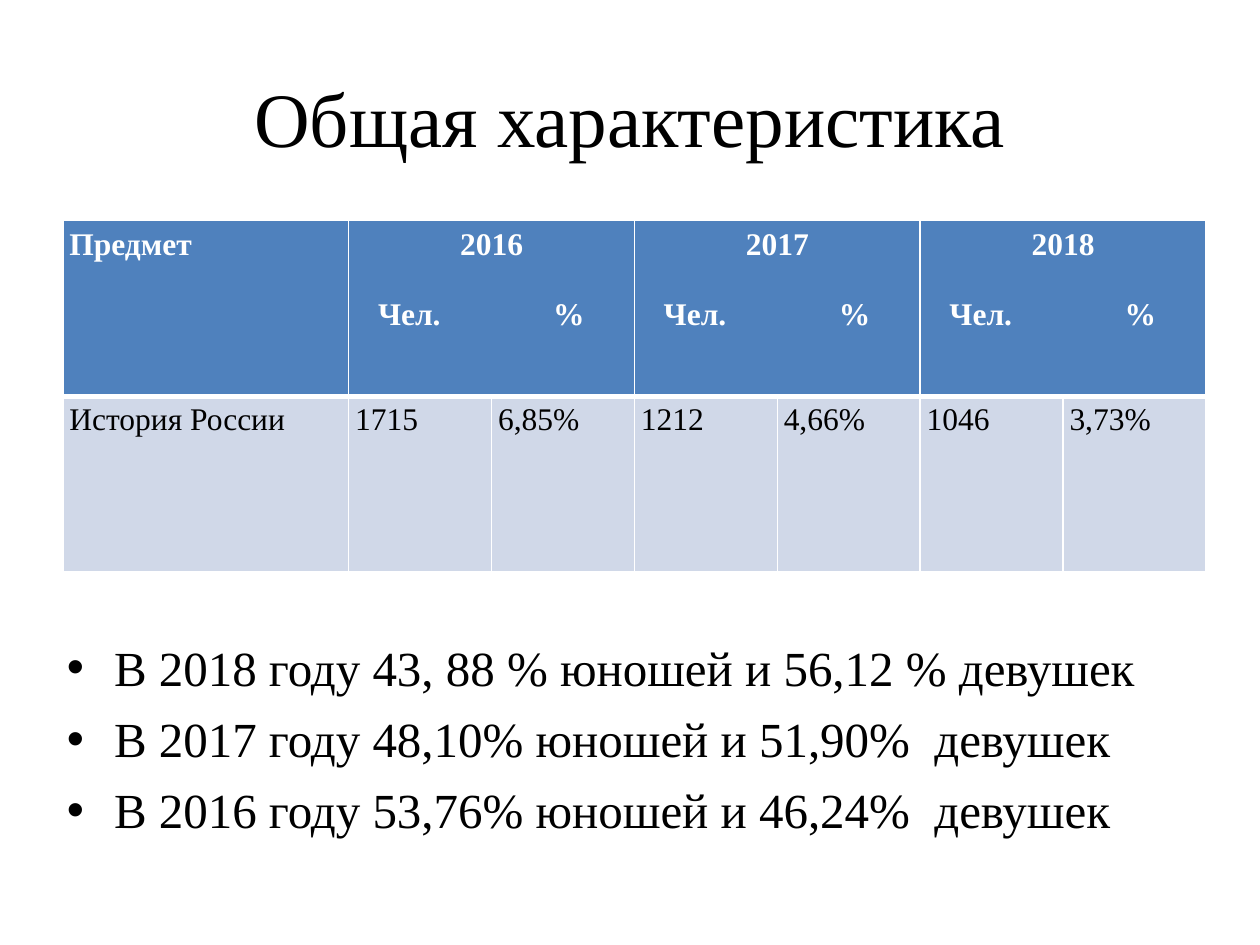
"""Build a slide with a table of exam takers by year and a list of their shares."""
from typing import NamedTuple

from lxml.etree import SubElement
from pptx import Presentation
from pptx.dml.color import RGBColor
from pptx.enum.text import MSO_ANCHOR, PP_ALIGN
from pptx.oxml import parse_xml
from pptx.oxml.ns import qn
from pptx.util import Cm, Pt

FONT = "Times New Roman"
NS = "http://schemas.openxmlformats.org/drawingml/2006/main"
WHITE, BLACK, BLUE, PALE = "FFFFFF", "000000", "4F81BD", "D0D8E8"
UNIT, HIGH = 2.88, 3.54


class Year(NamedTuple):
    name: str
    count: str
    share: str


YEARS = [
    Year("2016", "1715", "6,85%"),
    Year("2017", "1212", "4,66%"),
    Year("2018", "1046", "3,73%"),
]
NOTES = [
    "В 2018 году 43, 88 % юношей и 56,12 % девушек",
    "В 2017 году 48,10% юношей и 51,90%  девушек",
    "В 2016 году 53,76% юношей и 46,24%  девушек",
]


def paint(part, tint: str) -> None:
    part.rgb = RGBColor.from_string(tint)


def write(para, text: str, size: float, tint: str, bold: bool = False) -> None:
    run = para.add_run()
    run.text = text
    font = run.font
    font.name, font.size, font.bold = FONT, Pt(size), bold
    paint(font.color, tint)


def edge(cell, side: str, width: float, spot: int) -> None:
    line = parse_xml(
        f'<a:ln{side} xmlns:a="{NS}" w="{Pt(width)}"><a:solidFill>'
        f'<a:srgbClr val="{WHITE}"/></a:solidFill></a:ln{side}>'
    )
    cell._tc.get_or_add_tcPr().insert(spot, line)


def style(cell, head: bool) -> None:
    cell.margin_left = cell.margin_right = Cm(0.13)
    cell.margin_top = cell.margin_bottom = Cm(0.13)
    cell.fill.solid()
    paint(cell.fill.fore_color, BLUE if head else PALE)
    widths = {"L": 1, "R": 1, "T": 1 if head else 3, "B": 3 if head else 1}
    for spot, (side, width) in enumerate(widths.items()):
        edge(cell, side, width, spot)


def fill_head(cell, year: Year) -> None:
    frame = cell.text_frame
    top = frame.paragraphs[0]
    top.alignment = PP_ALIGN.CENTER
    write(top, year.name, 18, WHITE, True)
    low = frame.add_paragraph()
    low.alignment = PP_ALIGN.LEFT
    low.space_before = Pt(20)
    tabs = SubElement(low._p.get_or_add_pPr(), qn("a:tabLst"))
    for stop in (0.46, 3.99):
        SubElement(tabs, qn("a:tab"), pos=str(Cm(stop)), algn="l")
    write(low, "\tЧел.\t%", 18, WHITE, True)


def add_grid(slide, years: list[Year]) -> None:
    cols = 1 + 2 * len(years)
    grid = slide.shapes.add_table(
        2, cols, Cm(1.27), Cm(4.45), Cm(UNIT * (cols + 1)), Cm(2 * HIGH)
    ).table
    for spot, col in enumerate(grid.columns):
        col.width = Cm(UNIT if spot else 2 * UNIT)
    for spot, row in enumerate(grid.rows):
        row.height = Cm(HIGH)
        for cell in row.cells:
            style(cell, spot == 0)
    write(grid.cell(0, 0).text_frame.paragraphs[0], "Предмет", 18, WHITE, True)
    for spot, year in enumerate(years):
        col = 1 + 2 * spot
        grid.cell(0, col).merge(grid.cell(0, col + 1))
        fill_head(grid.cell(0, col), year)
    facts = ["История России"]
    for year in years:
        facts += [year.count, year.share]
    for col, fact in enumerate(facts):
        write(grid.cell(1, col).text_frame.paragraphs[0], fact, 18, BLACK)


def add_list(slide, notes: list[str]) -> None:
    frame = slide.shapes.add_textbox(Cm(1.1), Cm(12.73), Cm(23.04), Cm(4.3)).text_frame
    frame.word_wrap = True
    for spot, note in enumerate(notes):
        para = frame.add_paragraph() if spot else frame.paragraphs[0]
        para.space_before = Pt(7)
        props = para._p.get_or_add_pPr()
        props.set("marL", str(Cm(0.95)))
        props.set("indent", str(-Cm(0.95)))
        SubElement(props, qn("a:buFont"), typeface="Arial")
        SubElement(props, qn("a:buChar"), char="•")
        write(para, note, 28, BLACK)


def main() -> None:
    deck = Presentation()
    deck.slide_width, deck.slide_height = Cm(25.4), Cm(19.05)
    slide = deck.slides.add_slide(deck.slide_layouts[5])
    title = slide.shapes.title
    title.left, title.top, title.width, title.height = Cm(1.27), Cm(0.76), Cm(22.86), Cm(3.18)
    title.text_frame.vertical_anchor = MSO_ANCHOR.MIDDLE
    para = title.text_frame.paragraphs[0]
    para.alignment = PP_ALIGN.CENTER
    write(para, "Общая характеристика", 44, BLACK)
    add_grid(slide, YEARS)
    add_list(slide, NOTES)
    deck.save("out.pptx")


if __name__ == "__main__":
    main()
